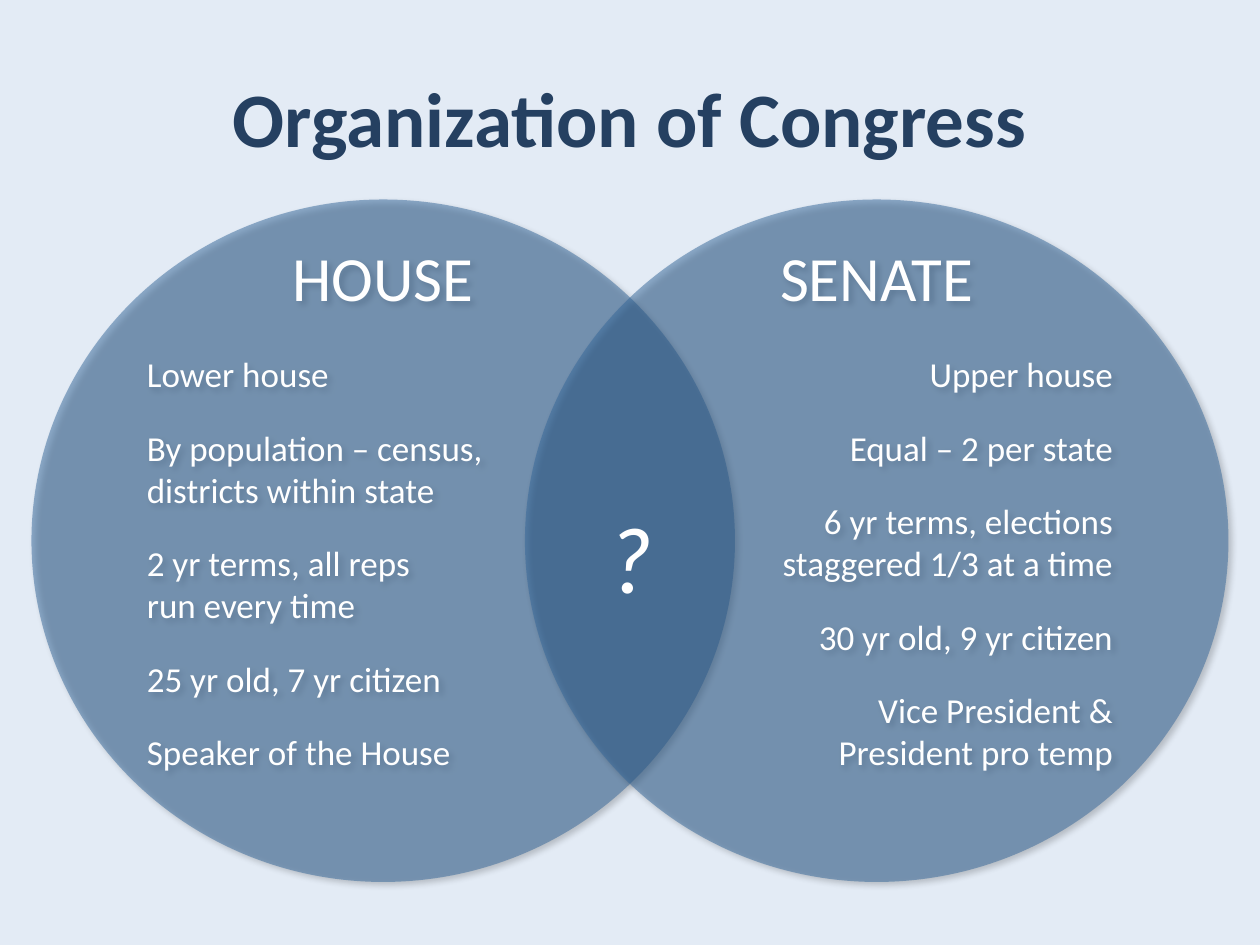
from dataclasses import dataclass

from lxml.etree import SubElement
from pptx import Presentation
from pptx.dml.color import RGBColor
from pptx.enum.shapes import MSO_SHAPE
from pptx.enum.text import MSO_ANCHOR, PP_ALIGN
from pptx.oxml import parse_xml
from pptx.oxml.ns import nsdecls, qn
from pptx.util import Pt


@dataclass(frozen=True)
class Theme:
    font: str = "Calibri"
    background: RGBColor = RGBColor(0xE3, 0xEB, 0xF5)
    title: RGBColor = RGBColor(0x25, 0x40, 0x61)
    circle: RGBColor = RGBColor(0x33, 0x66, 0x99)
    text: RGBColor = RGBColor(0xFF, 0xFF, 0xFF)
    title_size: int = 44
    heading_size: int = 36
    fact_size: int = 20
    question_size: int = 54


THEME = Theme()

CHAMBERS = [
    ("HOUSE", PP_ALIGN.LEFT, [
        "Lower house",
        "By population – census,\vdistricts within state",
        "2 yr terms, all reps\vrun every time",
        "25 yr old, 7 yr citizen",
        "Speaker of the House",
    ]),
    ("SENATE", PP_ALIGN.RIGHT, [
        "Upper house",
        "Equal – 2 per state",
        "6 yr terms, elections\vstaggered 1/3 at a time",
        "30 yr old, 9 yr citizen",
        "Vice President &\vPresident pro temp",
    ]),
]


def effects():
    return parse_xml(
        f'<a:effectLst {nsdecls("a")}>'
        '<a:outerShdw blurRad="50800" dist="38100" dir="2700000" algn="tl">'
        '<a:srgbClr val="000000"><a:alpha val="40000"/></a:srgbClr>'
        '</a:outerShdw></a:effectLst>'
    )


def write(paragraph, text, size, color, align=PP_ALIGN.CENTER, bold=False, italic=False):
    paragraph.text = text
    paragraph.alignment = align
    for run in paragraph.runs:
        run.font.name = THEME.font
        run.font.size = Pt(size)
        run.font.bold = bold
        run.font.italic = italic
        run.font.color.rgb = color


def add_label(slide, box, text, size, color, **style):
    label = slide.shapes.add_textbox(*map(Pt, box))
    frame = label.text_frame
    frame.word_wrap = True
    write(frame.paragraphs[0], text, size, color, **style)
    return frame


def add_title(slide, box):
    frame = add_label(slide, box, "Organization of Congress",
                      THEME.title_size, THEME.title, bold=True)
    frame.vertical_anchor = MSO_ANCHOR.MIDDLE


def add_chamber(slide, box, heading, align, facts):
    circle = slide.shapes.add_shape(MSO_SHAPE.OVAL, *map(Pt, box))
    circle.fill.solid()
    circle.fill.fore_color.rgb = THEME.circle
    color = circle.fill._xPr.find(qn("a:solidFill"))[0]
    SubElement(color, qn("a:alpha")).set("val", "50000")
    circle.line.fill.background()
    circle.shadow.inherit = False
    properties = circle._element.spPr
    properties.replace(properties.find(qn("a:effectLst")), effects())

    frame = circle.text_frame
    frame.word_wrap = True
    frame.vertical_anchor = MSO_ANCHOR.MIDDLE
    frame.margin_bottom = Pt(43.6)
    write(frame.paragraphs[0], heading, THEME.heading_size, THEME.text)
    frame.paragraphs[0].space_after = Pt(22)
    for fact in facts:
        paragraph = frame.add_paragraph()
        write(paragraph, fact, THEME.fact_size, THEME.text, align)
        paragraph.space_after = Pt(18)


def add_question(slide, box):
    frame = add_label(slide, box, "?", THEME.question_size, THEME.text, italic=True)
    properties = frame.paragraphs[0].runs[0].font._element
    properties.find(qn("a:solidFill")).addnext(effects())


def main():
    deck = Presentation()
    deck.slide_width, deck.slide_height = Pt(720), Pt(540)
    slide = deck.slides.add_slide(deck.slide_layouts[6])
    slide.background.fill.solid()
    slide.background.fill.fore_color.rgb = THEME.background

    add_title(slide, (36, 21.6, 648, 90))
    margin, top, width, height = 18, 114, 402, 390
    lefts = (margin, 720 - margin - width)
    for left, chamber in zip(lefts, CHAMBERS):
        add_chamber(slide, (left, top, width, height), *chamber)
    add_question(slide, (324, 281.5, 72, 72.7))
    deck.save("out.pptx")


if __name__ == "__main__":
    main()
